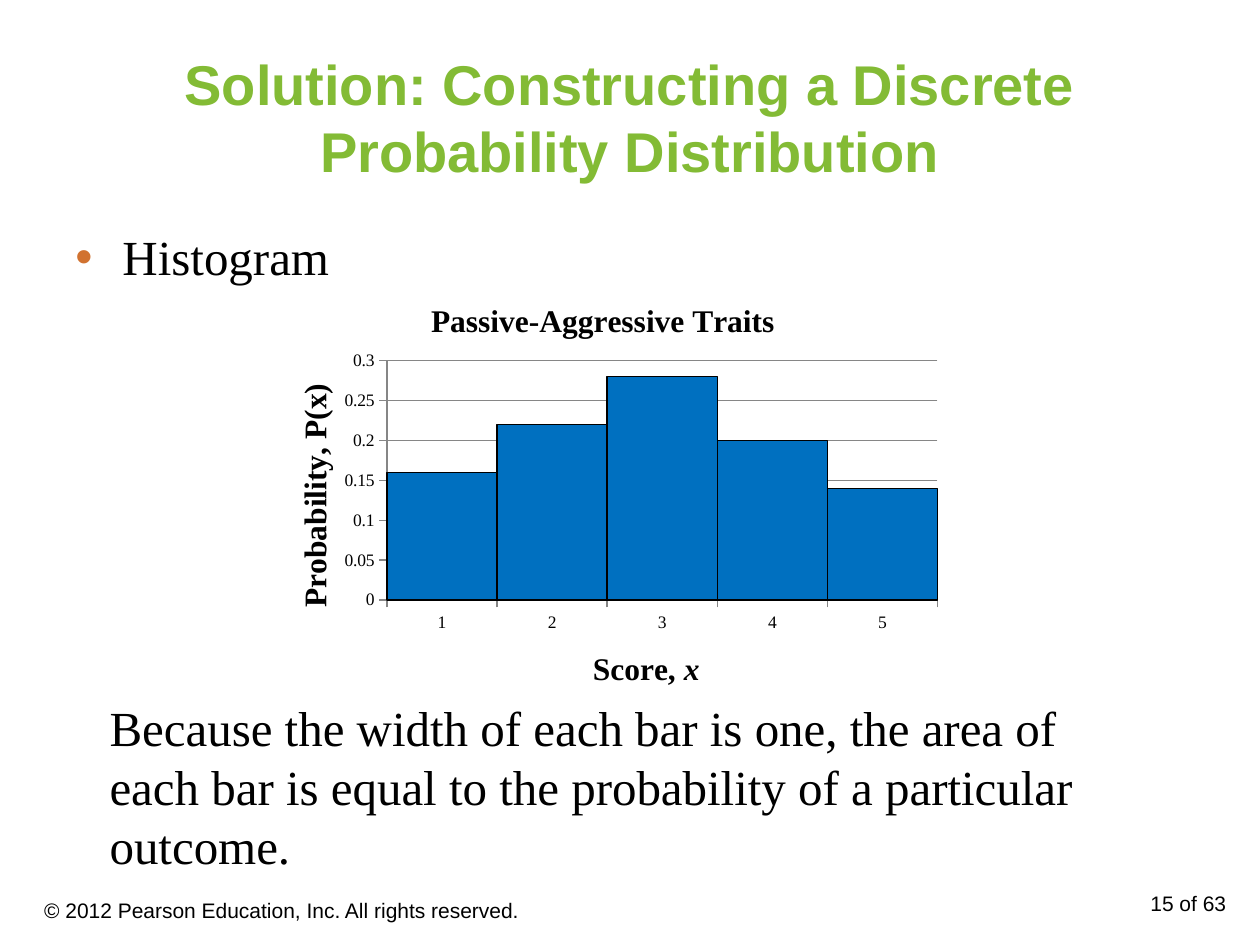
from lxml import etree
from pptx import Presentation
from pptx.chart.data import CategoryChartData
from pptx.dml.color import RGBColor
from pptx.enum.chart import XL_CHART_TYPE, XL_TICK_MARK
from pptx.enum.text import MSO_ANCHOR, PP_ALIGN
from pptx.oxml.ns import qn
from pptx.util import Cm, Pt

GREEN = RGBColor(0x83, 0xBB, 0x35)
ORANGE = RGBColor(0xD1, 0x72, 0x30)
BLUE = RGBColor(0x00, 0x70, 0xC0)
BLACK = RGBColor(0x00, 0x00, 0x00)
GRAY = RGBColor(0x86, 0x86, 0x86)
SANS = "Arial"
SERIF = "Times New Roman"
COLUMNS = XL_CHART_TYPE.COLUMN_CLUSTERED
TICK_OUTSIDE = XL_TICK_MARK.OUTSIDE
TOP, MIDDLE = MSO_ANCHOR.TOP, MSO_ANCHOR.MIDDLE
LEFT, CENTER, RIGHT = PP_ALIGN.LEFT, PP_ALIGN.CENTER, PP_ALIGN.RIGHT


def set_font(font, name, size, color=BLACK, bold=False):
    font.name = name
    font.size = Pt(size)
    font.bold = bold
    font.color.rgb = color


def add_text(slide, text, box, font_name, size, color=BLACK, bold=False,
             align=LEFT, anchor=TOP):
    """Add a wrapped one-paragraph text box; box is left, top, width, height in cm."""
    shape = slide.shapes.add_textbox(*map(Cm, box))
    frame = shape.text_frame
    frame.word_wrap = True
    frame.vertical_anchor = anchor
    frame.text = text
    paragraph = frame.paragraphs[0]
    paragraph.alignment = align
    set_font(paragraph.runs[0].font, font_name, size, color, bold)
    return paragraph


def add_bullet(paragraph, color, indent):
    properties = paragraph._p.get_or_add_pPr()
    properties.set("marL", str(Cm(indent)))
    properties.set("indent", str(-Cm(indent)))
    bullet_color = etree.SubElement(properties, qn("a:buClr"))
    etree.SubElement(bullet_color, qn("a:srgbClr"), val=str(color))
    etree.SubElement(properties, qn("a:buFont"), typeface=SANS)
    etree.SubElement(properties, qn("a:buChar"), char="•")


def set_layout(element, **fractions):
    """Place a chart part by fractions of the chart's width and height."""
    layout = element.find(qn("c:layout"))
    if layout is None:
        layout = etree.Element(qn("c:layout"))
        element.insert(0, layout)
    manual = etree.SubElement(layout, qn("c:manualLayout"))
    if "w" in fractions:
        etree.SubElement(manual, qn("c:layoutTarget"), val="inner")
    for name in ("x", "y"):
        etree.SubElement(manual, qn(f"c:{name}Mode"), val="edge")
    for name, value in fractions.items():
        etree.SubElement(manual, qn(f"c:{name}"), val=str(value))


def set_title(title, text, italic_text=""):
    paragraph = title.text_frame.paragraphs[0]
    paragraph.text = text
    if italic_text:
        paragraph.add_run().text = italic_text
    for run in paragraph.runs:
        set_font(run.font, SERIF, 18, bold=True)
        run.font.italic = run.text == italic_text


def format_axis(axis, title, italic_text, x, y):
    set_title(axis.axis_title, title, italic_text)
    set_layout(axis.axis_title._element, x=x, y=y)
    axis.major_tick_mark = TICK_OUTSIDE
    axis.format.line.color.rgb = GRAY


def add_histogram(slide):
    data = CategoryChartData()
    data.categories = ["1", "2", "3", "4", "5"]
    data.add_series("Series 1", (0.16, 0.22, 0.28, 0.2, 0.14))
    box = map(Cm, (5.13, 5.64, 14.05, 8.61))
    chart = slide.shapes.add_chart(COLUMNS, *box, data).chart
    set_font(chart.font, SERIF, 10)
    chart.has_legend = False
    set_title(chart.chart_title, "Passive-Aggressive Traits")

    format_axis(chart.category_axis, "Score, ", "x", x=0.48, y=0.86)
    value_axis = chart.value_axis
    format_axis(value_axis, "Probability, P(x)", "", x=0.05, y=0.23)
    value_axis.minimum_scale = 0
    value_axis.maximum_scale = 0.3
    value_axis.major_unit = 0.05
    value_axis.major_gridlines.format.line.color.rgb = GRAY

    plot = chart.plots[0]
    plot.gap_width = 0
    plot.vary_by_categories = False
    bars = plot.series[0].format
    bars.fill.solid()
    bars.fill.fore_color.rgb = BLUE
    bars.line.color.rgb = BLACK
    bars.line.width = Pt(0.75)
    plot_area = chart._chartSpace.chart.plotArea
    set_layout(plot_area, x=0.19, y=0.19, w=0.79, h=0.56)


def main():
    presentation = Presentation()
    presentation.slide_width = Cm(25.4)
    presentation.slide_height = Cm(19.05)
    slide = presentation.slides.add_slide(presentation.slide_layouts[6])

    add_text(slide, "Solution: Constructing a Discrete Probability Distribution",
             (1.27, 0.76, 22.86, 3.18), SANS, 32, GREEN, True, CENTER, MIDDLE)
    histogram_label = add_text(slide, "Histogram", (1.27, 4.45, 22.86, 1.6), SERIF, 28)
    add_bullet(histogram_label, ORANGE, 0.95)
    add_histogram(slide)
    add_text(slide, "Because the width of each bar is one, the area of each bar is "
             "equal to the probability of a particular outcome.",
             (1.96, 13.94, 21.62, 3.81), SERIF, 28)
    add_text(slide, "© 2012 Pearson Education, Inc. All rights reserved.",
             (0.64, 17.83, 12.07, 1.02), SANS, 12, anchor=MIDDLE)
    add_text(slide, "15 of 63", (19.05, 17.83, 5.92, 1.02), SANS, 12, align=RIGHT)
    presentation.save("out.pptx")


if __name__ == "__main__":
    main()
